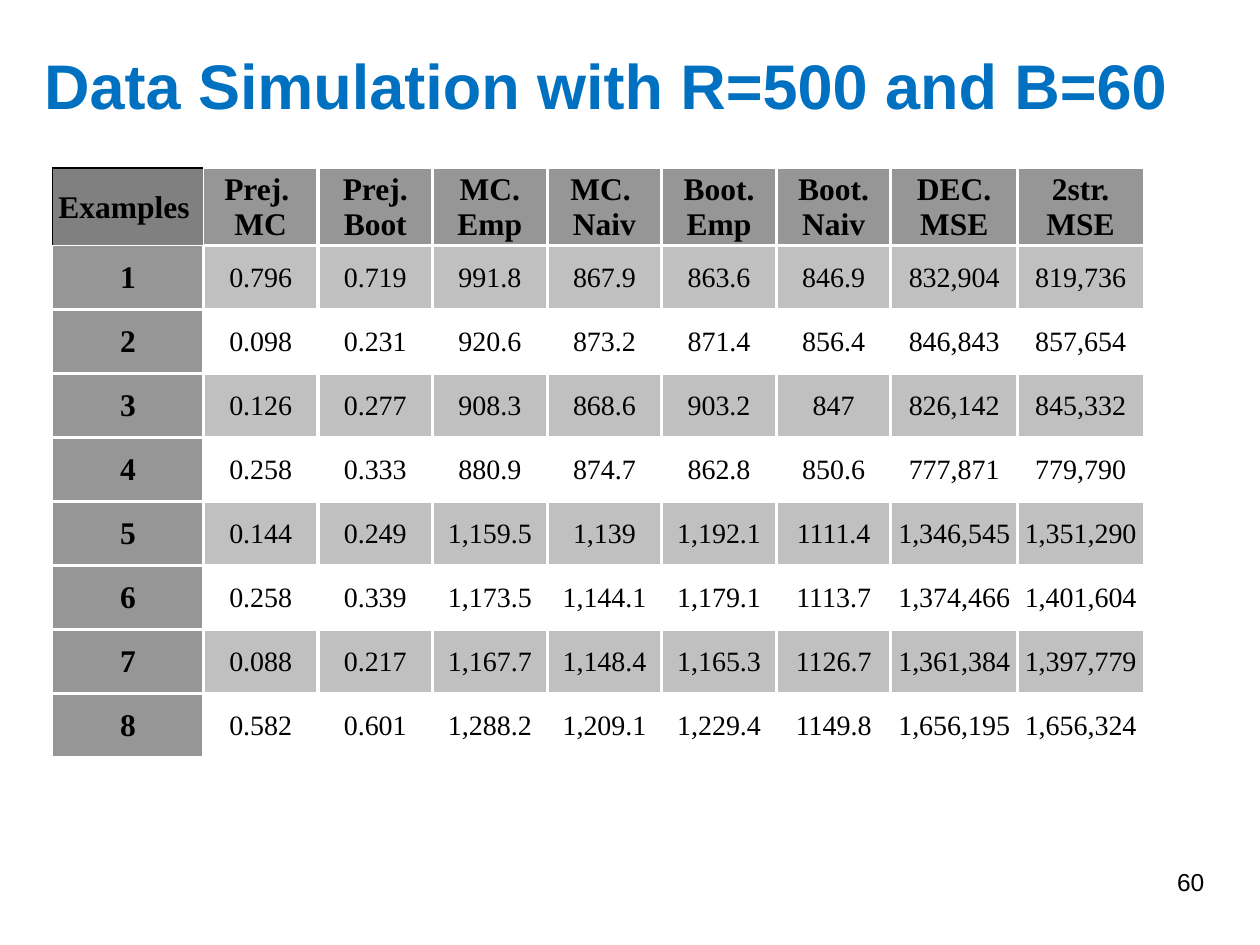
import pptx
import pptx.dml.color
import pptx.enum.text
import pptx.oxml
import pptx.oxml.ns
import pptx.util
import lxml.etree

Cm = pptx.util.Cm
Pt = pptx.util.Pt
RGBColor = pptx.dml.color.RGBColor
ALIGN = pptx.enum.text.PP_ALIGN
ANCHOR = pptx.enum.text.MSO_ANCHOR

TITLE = "Data Simulation with R=500 and B=60"
SLIDE_NUMBER = "60"
HEADERS = ["Examples ", "Prej. \vMC", "Prej.\vBoot", "MC.\vEmp", "MC. \vNaiv",
           "Boot.\vEmp", "Boot.\vNaiv", "DEC.\vMSE", "2str.\vMSE"]
RESULTS = [
    ["1", "0.796", "0.719", "991.8", "867.9", "863.6", "846.9", "832,904", "819,736"],
    ["2", "0.098", "0.231", "920.6", "873.2", "871.4", "856.4", "846,843", "857,654"],
    ["3", "0.126", "0.277", "908.3", "868.6", "903.2", "847", "826,142", "845,332"],
    ["4", "0.258", "0.333", "880.9", "874.7", "862.8", "850.6", "777,871", "779,790"],
    ["5", "0.144", "0.249", "1,159.5", "1,139", "1,192.1", "1111.4", "1,346,545", "1,351,290"],
    ["6", "0.258", "0.339", "1,173.5", "1,144.1", "1,179.1", "1113.7", "1,374,466", "1,401,604"],
    ["7", "0.088", "0.217", "1,167.7", "1,148.4", "1,165.3", "1126.7", "1,361,384", "1,397,779"],
    ["8", "0.582", "0.601", "1,288.2", "1,209.1", "1,229.4", "1149.8", "1,656,195", "1,656,324"],
]
COLUMN_WIDTHS = [3.04] + [2.31] * 6 + [2.55] * 2
ROW_HEIGHTS = [1.43] + [1.29] * len(RESULTS)

THEME = {
    "corner": "808080", "heading": "969696", "bands": ("FFFFFF", "C0C0C0"),
    "grid": ("FFFFFF", 2), "corner_border": ("000000", 1),
    "title": {"name": "Arial", "size": Pt(36), "bold": True, "color": "0070C0"},
    "number": {"name": "Arial", "size": Pt(14), "bold": False, "color": "000000"},
    "label": {"name": "Times New Roman", "size": Pt(18), "bold": True, "color": "000000"},
    "value": {"name": "Times New Roman", "size": Pt(16), "bold": False, "color": "000000"},
}
CELL_FORMAT = {"margin_left": Cm(0.03), "margin_right": Cm(0.03), "margin_top": Cm(0.03),
               "margin_bottom": Cm(0), "vertical_anchor": ANCHOR.MIDDLE}


def set_attributes(target, values):
    """Set every named attribute of the target."""
    for name, value in values.items():
        setattr(target, name, value)


def write_text(text_frame, text, style, alignment):
    """Write one paragraph in a theme style."""
    text_frame.text = text
    paragraph = text_frame.paragraphs[0]
    paragraph.alignment = alignment
    for run in paragraph.runs:
        set_attributes(run.font, {key: style[key] for key in ("name", "size", "bold")})
        run.font.color.rgb = RGBColor.from_string(style["color"])


def add_text(slide, box, text, style, alignment, anchor):
    """Add a wrapped text box placed in centimetres."""
    text_frame = slide.shapes.add_textbox(*map(Cm, box)).text_frame
    set_attributes(text_frame, {"word_wrap": True, "vertical_anchor": anchor})
    write_text(text_frame, text, style, alignment)


def add_borders(cell, sides, border):
    """Draw solid borders on the given sides of a cell."""
    color, width = border
    properties = cell._tc.get_or_add_tcPr()
    for side in sides:
        line = lxml.etree.SubElement(properties, pptx.oxml.ns.qn("a:ln" + side), w=str(Pt(width)))
        fill = lxml.etree.SubElement(line, pptx.oxml.ns.qn("a:solidFill"))
        lxml.etree.SubElement(fill, pptx.oxml.ns.qn("a:srgbClr"), val=color)


def inner_sides(row, column):
    """List the sides of a cell that face another plain cell."""
    faces = {"L": column > 0 and (row, column) != (0, 1),
             "R": column < len(HEADERS) - 1,
             "T": row > 0 and (row, column) != (1, 0),
             "B": row < len(RESULTS)}
    return [side for side, drawn in faces.items() if drawn]


def format_cell(cell, row, column, text):
    """Fill, frame and write one cell according to its place."""
    is_corner = row == column == 0
    is_heading = row == 0 or column == 0
    set_attributes(cell, CELL_FORMAT)
    if is_corner:
        add_borders(cell, "LRTB", THEME["corner_border"])
        color = THEME["corner"]
    else:
        add_borders(cell, inner_sides(row, column), THEME["grid"])
        color = THEME["heading"] if is_heading else THEME["bands"][row % 2]
    cell.fill.solid()
    cell.fill.fore_color.rgb = RGBColor.from_string(color)
    write_text(cell.text_frame, text, THEME["label" if is_heading else "value"], ALIGN.CENTER)


def add_results_table(slide):
    """Add the table of simulation results."""
    rows = [HEADERS] + RESULTS
    table = slide.shapes.add_table(
        len(rows), len(HEADERS), Cm(1.06), Cm(3.39),
        Cm(sum(COLUMN_WIDTHS)), Cm(sum(ROW_HEIGHTS))).table
    set_attributes(table, {"first_row": False, "horz_banding": False})
    for column, width in zip(table.columns, COLUMN_WIDTHS):
        column.width = Cm(width)
    for row, height in zip(table.rows, ROW_HEIGHTS):
        row.height = Cm(height)
    for row, texts in enumerate(rows):
        for column, text in enumerate(texts):
            format_cell(table.cell(row, column), row, column, text)


def main():
    """Build and save the slide."""
    presentation = pptx.Presentation()
    set_attributes(presentation, {"slide_width": Cm(25.4), "slide_height": Cm(19.05)})
    slide = presentation.slides.add_slide(presentation.slide_layouts[6])
    add_text(slide, (19.25, 17.35, 5.28, 1.27), SLIDE_NUMBER, THEME["number"],
             ALIGN.RIGHT, ANCHOR.TOP)
    add_text(slide, (0.64, 1.07, 23.7, 1.27), TITLE, THEME["title"], ALIGN.LEFT, ANCHOR.MIDDLE)
    add_results_table(slide)
    presentation.save("out.pptx")


if __name__ == "__main__":
    main()
